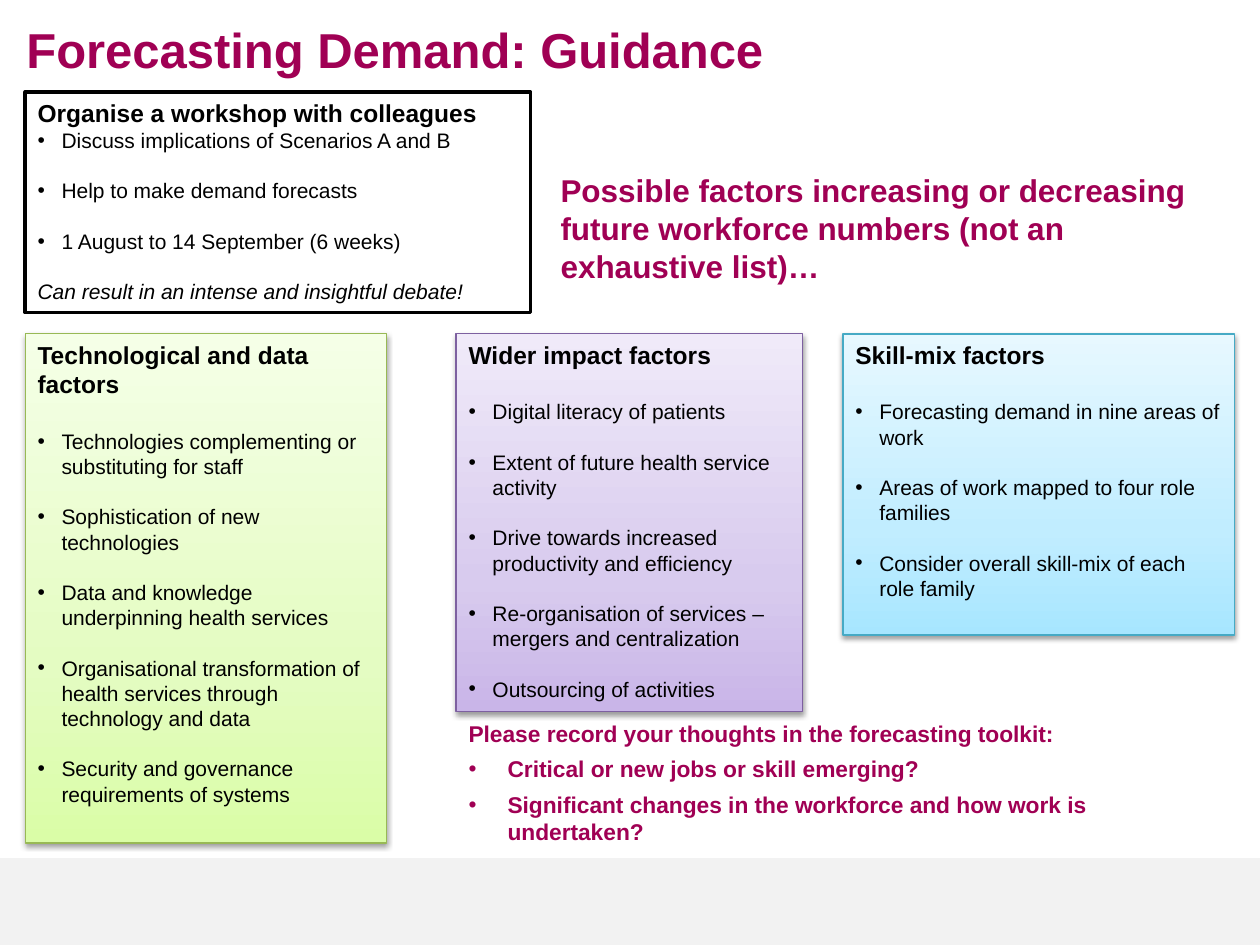
"""Build the slide of guidance on forecasting workforce demand."""
from copy import deepcopy
from lxml import etree
from pptx import Presentation
from pptx.dml.color import RGBColor
from pptx.enum.shapes import MSO_SHAPE
from pptx.enum.text import MSO_ANCHOR, MSO_AUTO_SIZE, PP_ALIGN
from pptx.oxml.ns import qn
from pptx.util import Inches, Pt

RECT = MSO_SHAPE.RECTANGLE
TOP, MIDDLE = MSO_ANCHOR.TOP, MSO_ANCHOR.MIDDLE
LEFT = PP_ALIGN.LEFT
FIXED = MSO_AUTO_SIZE.NONE
BLACK = RGBColor(0x00, 0x00, 0x00)
WHITE = RGBColor(0xFF, 0xFF, 0xFF)
PLUM = RGBColor(0xA0, 0x00, 0x54)
GREY = RGBColor(0xF2, 0xF2, 0xF2)
GREEN = RGBColor(0x98, 0xB9, 0x55)
LIMES = [RGBColor(0xDA, 0xFD, 0xA7), RGBColor(0xE4, 0xFC, 0xC2), RGBColor(0xF5, 0xFF, 0xE7)]
PURPLE = RGBColor(0x7D, 0x60, 0xA0)
LILACS = [RGBColor(0xC9, 0xB5, 0xE8), RGBColor(0xD8, 0xCB, 0xEE), RGBColor(0xF0, 0xEA, 0xF9)]
TEAL = RGBColor(0x46, 0xAA, 0xC5)
BLUES = [RGBColor(0xA7, 0xE6, 0xFF), RGBColor(0xC1, 0xED, 0xFF), RGBColor(0xE7, 0xF8, 0xFF)]
LEAD = 1.2


def write(frame, text, size, color, bold=False, italic=False, indent=0, gap=0):
    """Add one paragraph, with a bullet when it has an indent."""
    para = frame.paragraphs[0]
    if para.runs:
        para = frame.add_paragraph()
    if indent:
        props = para._p.get_or_add_pPr()
        props.set("marL", str(Inches(indent)))
        props.set("indent", str(-Inches(indent)))
        etree.SubElement(props, qn("a:buFont"), typeface="Arial")
        etree.SubElement(props, qn("a:buChar"), char="•")
    para.alignment = LEFT
    para.line_spacing = Pt(size * LEAD)
    para.space_before = Pt(gap * LEAD)
    run = para.add_run()
    run.text = text
    font = run.font
    font.name, font.size, font.bold, font.italic = "Arial", Pt(size), bold, italic
    font.color.rgb = color


def setup(shape, anchor=TOP):
    """Prepare the text frame of a shape."""
    frame = shape.text_frame
    frame.word_wrap = True
    frame.auto_size = FIXED
    frame.vertical_anchor = anchor
    return frame


prs = Presentation()
prs.slide_width, prs.slide_height = Inches(10), Inches(7.5)
slide = prs.slides.add_slide(prs.slide_layouts[5])
shapes = slide.shapes

band = shapes.add_shape(RECT, Inches(0), Inches(6.81), Inches(10), Inches(0.69))
band.shadow.inherit = False
band.fill.solid()
band.fill.fore_color.rgb = GREY
band.line.fill.background()

title = shapes.title
title.left, title.top = Inches(0.11), Inches(0.11)
title.width, title.height = Inches(6.15), Inches(0.56)
write(setup(title, MIDDLE), "Forecasting Demand: Guidance", 28, PLUM, bold=True)

event = shapes.add_shape(RECT, Inches(0.2), Inches(0.73), Inches(4.01), Inches(1.75))
event.shadow.inherit = False
event.fill.solid()
event.fill.fore_color.rgb = WHITE
event.line.color.rgb = BLACK
event.line.width = Pt(2)
frame = setup(event)
write(frame, "Organise a workshop with colleagues", 14, BLACK, bold=True)
points = [
    "Discuss implications of Scenarios A and B",
    "Help to make demand forecasts",
    "1 August to 14 September (6 weeks)",
]
for num, point in enumerate(points):
    write(frame, point, 12, BLACK, indent=0.19, gap=12 if num else 0)
write(frame, "Can result in an intense and insightful debate!", 12, BLACK, italic=True, gap=12)

notes = shapes.add_textbox(Inches(3.62), Inches(5.66), Inches(6.18), Inches(1.11))
frame = setup(notes)
write(frame, "Please record your thoughts in the forecasting toolkit:", 13, PLUM, bold=True)
for point in [
    "Critical or new jobs or skill emerging?",
    "Significant changes in the workforce and how work is undertaken?",
]:
    write(frame, point, 13, PLUM, bold=True, indent=0.31, gap=4)

intro = shapes.add_textbox(Inches(4.35), Inches(1.31), Inches(5.45), Inches(1.01))
write(
    setup(intro),
    "Possible factors increasing or decreasing future workforce numbers (not an exhaustive list)…",
    18, PLUM, bold=True,
)

panels = [
    (0.2, 2.87, 4.04, GREEN, LIMES, "Technological and data factors", [
        "Technologies complementing or substituting for staff",
        "Sophistication of new technologies",
        "Data and knowledge underpinning health services",
        "Organisational transformation of health services through technology and data",
        "Security and governance requirements of systems",
    ]),
    (3.62, 2.75, 3, PURPLE, LILACS, "Wider impact factors", [
        "Digital literacy of patients",
        "Extent of future health service activity",
        "Drive towards increased productivity and efficiency",
        "Re-organisation of services – mergers and centralization",
        "Outsourcing of activities",
    ]),
    (6.69, 3.11, 2.39, TEAL, BLUES, "Skill-mix factors", [
        "Forecasting demand in nine areas of work",
        "Areas of work mapped to four role families",
        "Consider overall skill-mix of each role family",
    ]),
]
for left, width, height, edge, shades, head, points in panels:
    panel = shapes.add_shape(RECT, Inches(left), Inches(2.65), Inches(width), Inches(height))
    panel.line.color.rgb = edge
    panel.line.width = Pt(0.75)
    panel.fill.gradient()
    panel.fill.gradient_angle = 90
    props = panel._element.spPr
    stops = props.find(".//" + qn("a:gsLst"))
    stops.append(deepcopy(stops[-1]))
    for stop, place, shade in zip(panel.fill.gradient_stops, (0, 0.35, 1), shades):
        stop.position = place
        stop.color.rgb = shade
    panel.shadow.inherit = False
    shadow = etree.SubElement(
        props.find(qn("a:effectLst")), qn("a:outerShdw"),
        blurRad=str(Pt(3.1)), dist=str(Pt(1.6)), dir="5400000", rotWithShape="0",
    )
    tone = etree.SubElement(shadow, qn("a:srgbClr"), val=str(BLACK))
    etree.SubElement(tone, qn("a:alpha"), val="38000")
    frame = setup(panel)
    write(frame, head, 14, BLACK, bold=True)
    for num, point in enumerate(points):
        write(frame, point, 12, BLACK, indent=0.19, gap=12 if num else 14)

prs.save("out.pptx")
